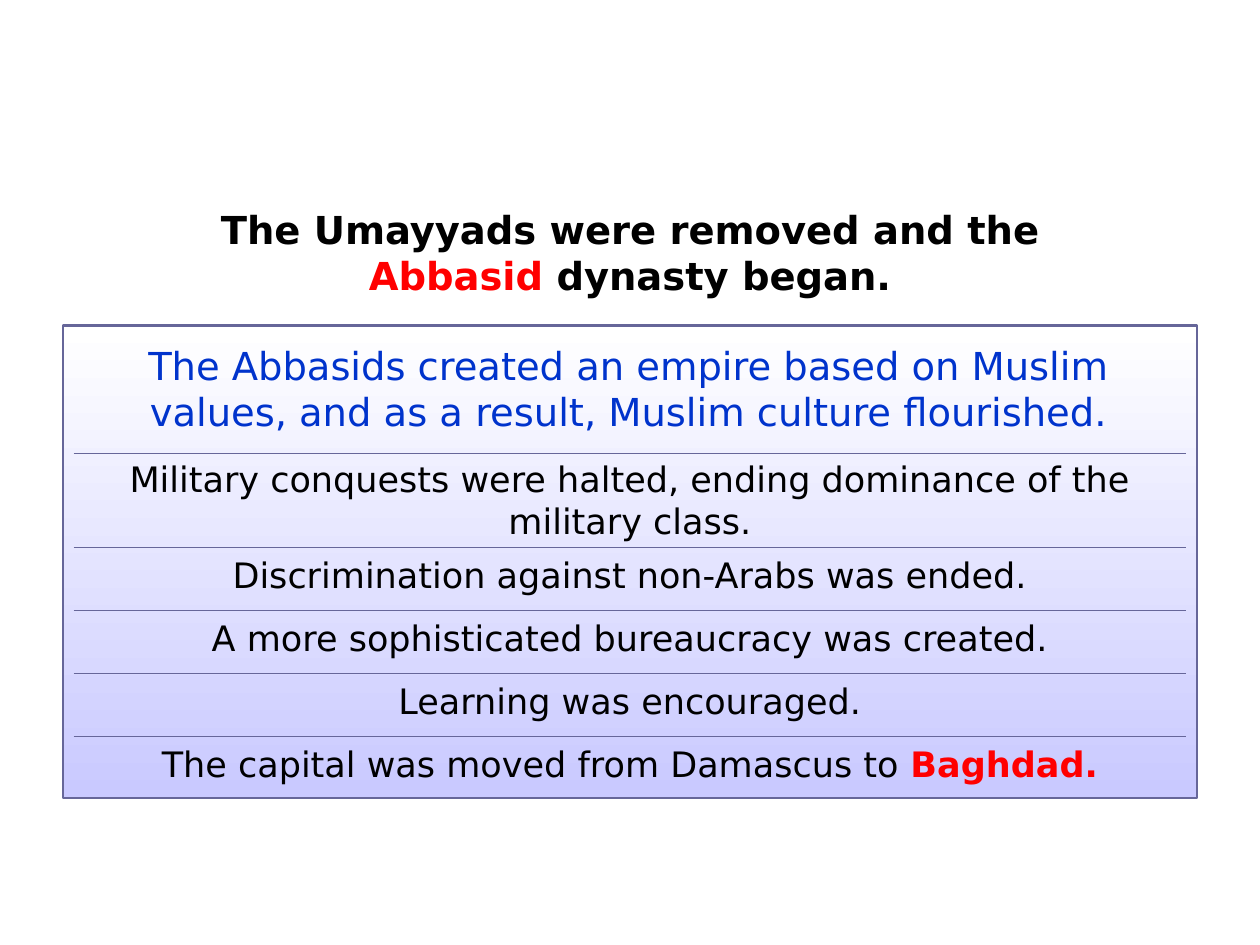
from dataclasses import dataclass

from lxml import etree
from pptx import Presentation
from pptx.dml.color import RGBColor
from pptx.enum.shapes import MSO_SHAPE
from pptx.enum.text import MSO_ANCHOR, PP_ALIGN
from pptx.oxml.ns import qn
from pptx.util import Pt

RECTANGLE = MSO_SHAPE.RECTANGLE
TOP = MSO_ANCHOR.TOP
CENTER = PP_ALIGN.CENTER


@dataclass(frozen=True)
class Theme:
    font: str = "DejaVu Sans"
    heading_size: int = 22
    point_size: int = 20
    text: str = "000000"
    accent: str = "FF0000"
    summary: str = "0033CC"
    line: str = "666699"
    panel_top: str = "FFFFFF"
    panel_bottom: str = "C9C9FF"


THEME = Theme()

# Each text is a list of (wording, colour, bold)
HEADING = [
    ("The Umayyads were removed and the ", THEME.text, True),
    ("Abbasid", THEME.accent, True),
    (" dynasty began.", THEME.text, True),
]
SUMMARY = [("The Abbasids created an empire based on Muslim values, "
            "and as a result, Muslim culture flourished.", THEME.summary, False)]
FIRST_POINT = [("Military conquests were halted, ending dominance "
                "of the military class.", THEME.text, False)]
SHORT_POINTS = [
    [("Discrimination against non-Arabs was ended.", THEME.text, False)],
    [("A more sophisticated bureaucracy was created.", THEME.text, False)],
    [("Learning was encouraged.", THEME.text, False)],
    [("The capital was moved from Damascus to ", THEME.text, False),
     ("Baghdad.", THEME.accent, True)],
]
ROW_HEIGHTS = [30, 54, 36, 36, 36, 36]


def color(value):
    return RGBColor.from_string(value)


def add_text(page, spans, left, top, width, height, size):
    box = page.shapes.add_textbox(Pt(left), Pt(top), Pt(width), Pt(height))
    frame = box.text_frame
    frame.word_wrap = True
    frame.vertical_anchor = TOP
    paragraph = frame.paragraphs[0]
    paragraph.alignment = CENTER
    paragraph.font.name = THEME.font
    paragraph.font.size = Pt(size)
    for wording, tint, bold in spans:
        span = paragraph.add_run()
        span.text = wording
        span.font.bold = bold
        span.font.color.rgb = color(tint)


def add_panel(page, left, top, width, height):
    panel = page.shapes.add_shape(RECTANGLE, Pt(left), Pt(top), Pt(width), Pt(height))
    panel.shadow.inherit = False
    panel.fill.gradient()
    panel.fill.gradient_angle = 270
    stops = panel.fill.gradient_stops
    for stop, position, tint in zip(stops, (0, 1), (THEME.panel_top, THEME.panel_bottom)):
        stop.position = position
        stop.color.rgb = color(tint)
    panel.line.color.rgb = color(THEME.line)
    panel.line.width = Pt(1.5)


def set_borders(cell, ruled_edges):
    properties = cell._tc.get_or_add_tcPr()
    for index, edge in enumerate(("lnL", "lnR", "lnT", "lnB")):
        border = etree.Element(qn(f"a:{edge}"), w=str(Pt(1)))
        if edge in ruled_edges:
            fill = etree.SubElement(border, qn("a:solidFill"))
            etree.SubElement(fill, qn("a:srgbClr"), val=THEME.line)
        else:
            etree.SubElement(border, qn("a:noFill"))
        properties.insert(index, border)


def add_ruled_table(page, left, top, width, heights):
    frame = page.shapes.add_table(len(heights), 1, Pt(left), Pt(top),
                                  Pt(width), Pt(sum(heights)))
    table = frame.table
    table.first_row = False
    table.horz_banding = False
    last = len(heights) - 1
    for index, height in enumerate(heights):
        table.rows[index].height = Pt(height)
        cell = table.cell(index, 0)
        cell.fill.background()
        # Rules run between rows only
        ruled_edges = [edge for edge, ruled in
                       (("lnT", index > 0), ("lnB", index < last)) if ruled]
        set_borders(cell, ruled_edges)


def main():
    deck = Presentation()
    deck.slide_width, deck.slide_height = Pt(720), Pt(540)
    page = deck.slides.add_slide(deck.slide_layouts[6])

    # Heading
    add_text(page, HEADING, 66, 114, 588, 60, THEME.heading_size)

    # Panel with the summary and the ruled rows
    add_panel(page, 36, 186, 648, 270)
    add_text(page, SUMMARY, 44, 192, 630, 60, THEME.heading_size)
    add_ruled_table(page, 42, 229, 636, ROW_HEIGHTS)

    # Points, one to a row
    add_text(page, FIRST_POINT, 42, 258, 636, 56, THEME.point_size)
    for index, point in enumerate(SHORT_POINTS):
        add_text(page, point, 36, 313 + 36 * index, 648, 32, THEME.point_size)

    deck.save("out.pptx")


if __name__ == "__main__":
    main()
